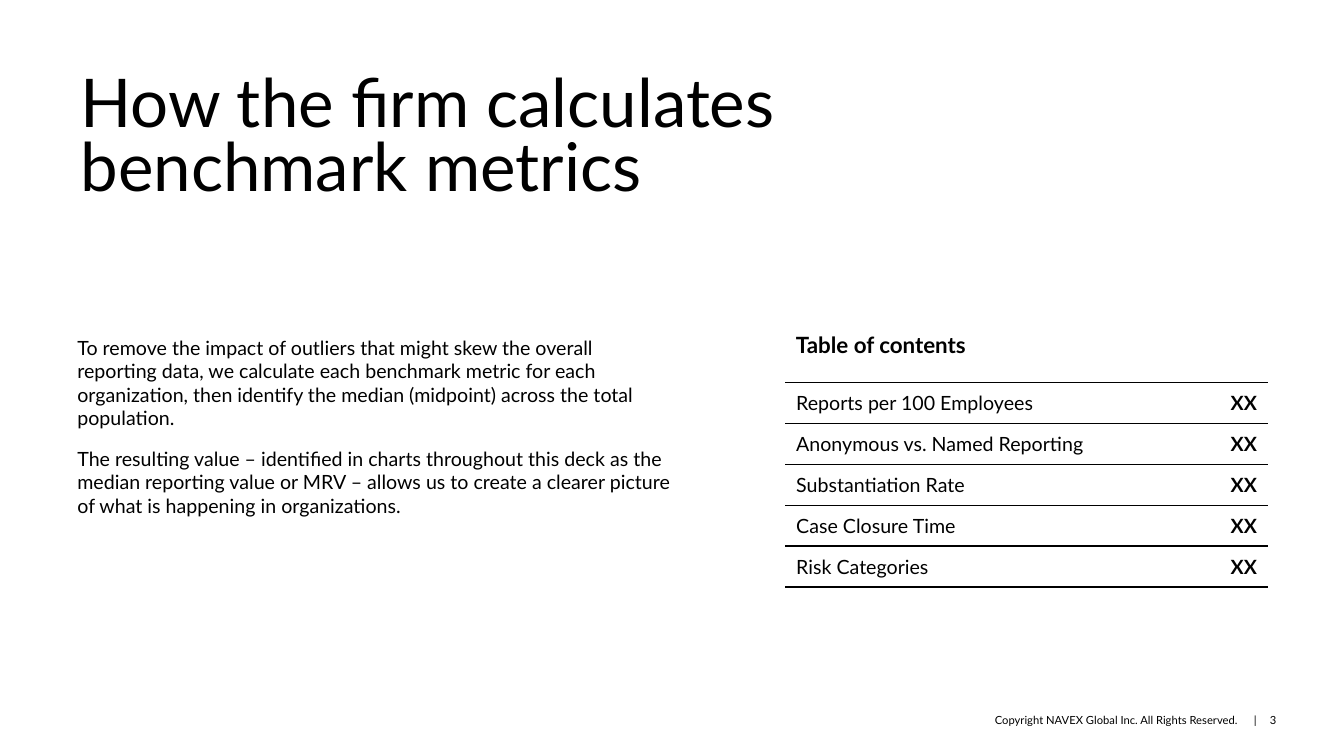
from lxml.etree import SubElement
from pptx import Presentation
from pptx.dml.color import RGBColor
from pptx.enum.text import MSO_ANCHOR as Anchor, PP_ALIGN as Align
from pptx.oxml.ns import qn
from pptx.util import Cm, Pt

COLORS = {"ink": "000000", "paper": "FFFFFF"}
FONT = "Lato"
TITLE_LINES = ["How the firm calculates", "benchmark metrics"]
EXPLANATION = [
    "To remove the impact of outliers that might skew the overall reporting data, "
    "we calculate each benchmark metric for each organization, then identify the "
    "median (midpoint) across the total population.",
    "The resulting value – identified in charts throughout this deck as the median "
    "reporting value or MRV – allows us to create a clearer picture of what is "
    "happening in organizations.",
]
TOPICS = [
    "Reports per 100 Employees",
    "Anonymous vs. Named Reporting",
    "Substantiation Rate",
    "Case Closure Time",
    "Risk Categories",
]
FOOTER = "Copyright NAVEX Global Inc. All Rights Reserved.\t|\t3"
FOOTER_TABS = [6.53, 6.93]


def add_run(paragraph, text, size, bold=False):
    run = paragraph.add_run()
    run.text = text
    run.font.name = FONT
    run.font.size = Pt(size)
    run.font.bold = bold
    run.font.color.rgb = RGBColor.from_string(COLORS["ink"])


def add_text_frame(slide, left, top, width, height):
    frame = slide.shapes.add_textbox(Cm(left), Cm(top), Cm(width), Cm(height)).text_frame
    frame.word_wrap = True
    return frame


def add_title(slide):
    title = add_text_frame(slide, 1.78, 1.78, 23.75, 0.89).paragraphs[0]
    title.line_spacing = 0.8
    first_line, second_line = TITLE_LINES
    add_run(title, first_line, 48)
    title.add_line_break()
    add_run(title, second_line, 48)


def add_explanation(slide):
    frame = add_text_frame(slide, 1.7, 8.33, 15.52, 6.63)
    for index, text in enumerate(EXPLANATION):
        paragraph = frame.add_paragraph() if index else frame.paragraphs[0]
        paragraph.space_before = Pt(6 if index else 0)
        paragraph.space_after = Pt(6)
        add_run(paragraph, text, 14)


def add_contents_heading(slide):
    frame = add_text_frame(slide, 19.81, 8.23, 9.55, 1.37)
    add_run(frame.paragraphs[0], "Table of contents", 16, bold=True)


def rule_cell(cell, sides):
    properties = cell._tc.get_or_add_tcPr()
    for side in sides:
        rule = SubElement(properties, qn(f"a:ln{side}"), w=str(Pt(1)))
        fill = SubElement(rule, qn("a:solidFill"))
        SubElement(fill, qn("a:srgbClr"), val=COLORS["ink"])
    cell.fill.background()


def add_contents_table(slide):
    row_count = len(TOPICS) + 1
    contents = slide.shapes.add_table(
        row_count, 2, Cm(19.81), Cm(8.61), Cm(12.12), Cm(1.03 * row_count)
    ).table
    contents.first_row = False
    contents.horz_banding = False
    for column, width in zip(contents.columns, [10.34, 1.78]):
        column.width = Cm(width)
    for row_index, row in enumerate(contents.rows):
        row.height = Cm(1.03)
        for cell in row.cells:
            cell.vertical_anchor = Anchor.MIDDLE
            rule_cell(cell, "TB" if row_index else "B")
    for row_index, topic in enumerate(TOPICS, start=1):
        add_run(contents.cell(row_index, 0).text_frame.paragraphs[0], topic, 14)
        page = contents.cell(row_index, 1).text_frame.paragraphs[0]
        page.alignment = Align.RIGHT
        add_run(page, "XX", 14, bold=True)


def add_footer(slide):
    frame = add_text_frame(slide, 25.07, 17.98, 7.3, 0.33)
    frame.margin_left = frame.margin_right = frame.margin_top = frame.margin_bottom = 0
    footer = frame.paragraphs[0]
    tabs = SubElement(footer._p.get_or_add_pPr(), qn("a:tabLst"))
    for position in FOOTER_TABS:
        SubElement(tabs, qn("a:tab"), pos=str(Cm(position)), algn="l")
    add_run(footer, FOOTER, 8)


def main():
    deck = Presentation()
    deck.slide_width, deck.slide_height = Cm(33.87), Cm(19.05)
    slide = deck.slides.add_slide(deck.slide_layouts[6])
    background = slide.background.fill
    background.solid()
    background.fore_color.rgb = RGBColor.from_string(COLORS["paper"])
    add_footer(slide)
    add_contents_table(slide)
    add_explanation(slide)
    add_title(slide)
    add_contents_heading(slide)
    deck.save("out.pptx")


if __name__ == "__main__":
    main()
